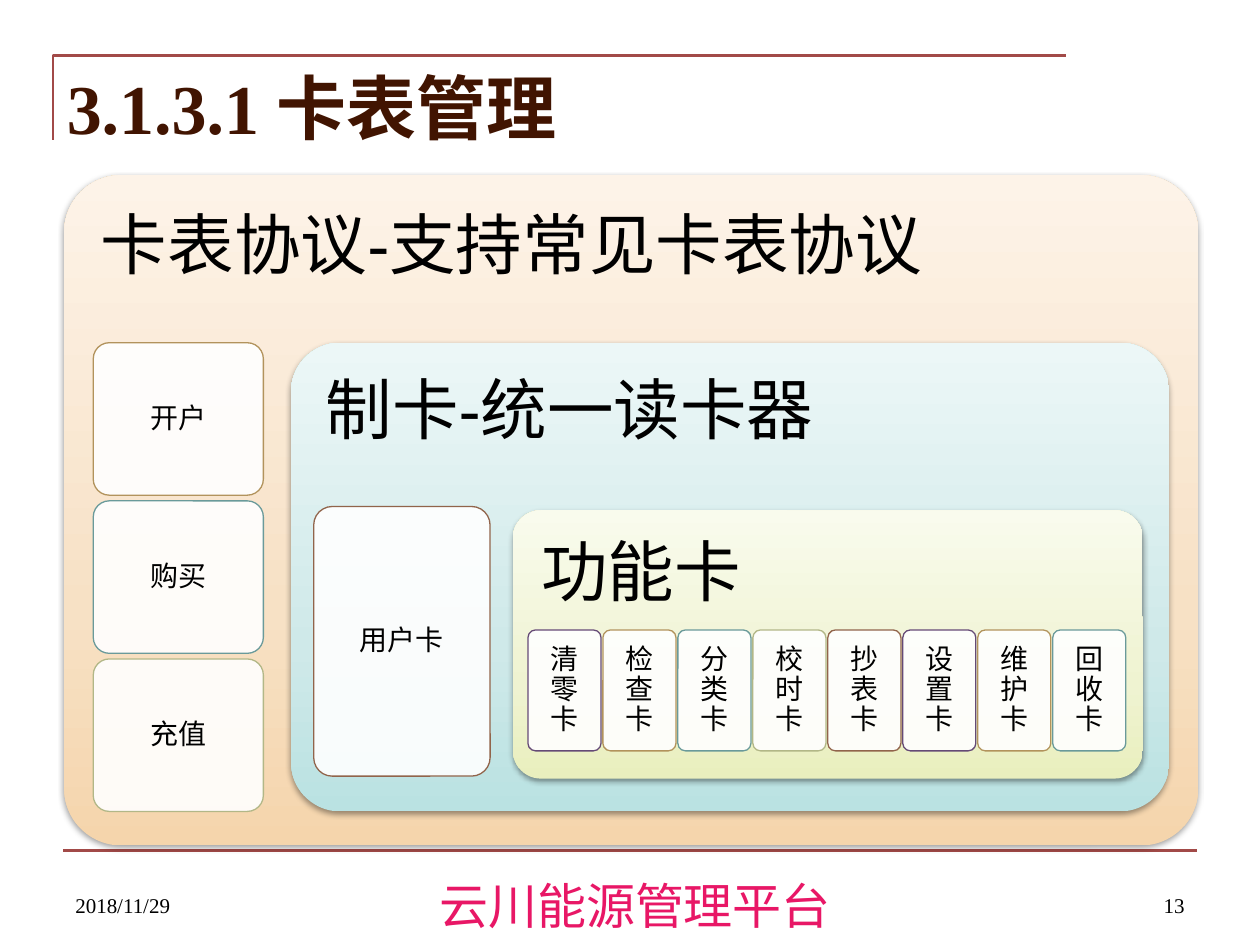
from dataclasses import dataclass
from itertools import cycle

from lxml import etree
from pptx import Presentation
from pptx import util as u
from pptx.dml.color import RGBColor
from pptx.enum import shapes, text
from pptx.oxml.ns import qn

HUES = {
    "rule": "A24A48", "title": "411401", "brand": "E81766",
    "ink": "000000", "paper": "FFFFFF",
    "tan": "B2935C", "teal": "6A9A9A", "olive": "B2B787",
    "brown": "91644B", "plum": "654A76",
}
# Gradient stops run from the bottom edge up
FADES = {
    "sand": ("F5D5AC", "F7E1C5", "FDF3E8"),
    "aqua": ("BAE2E2", "CFE9E9", "ECF7F7"),
    "lime": ("E9EFBE", "EFF3D1", "F9FBED"),
}
STOPS = (0, 35, 100)
CJK = "Noto Sans CJK SC"
SERIF = "Times New Roman"
LEFT, MID, RIGHT = (text.PP_ALIGN.LEFT, text.PP_ALIGN.CENTER,
                    text.PP_ALIGN.RIGHT)
TOP, CORE, BASE = (text.MSO_ANCHOR.TOP, text.MSO_ANCHOR.MIDDLE,
                   text.MSO_ANCHOR.BOTTOM)


@dataclass
class Box:
    """A cell range on a grid of 100 columns by 75 rows."""
    x: float
    y: float
    w: float
    h: float

    def area(self) -> list:
        return [grid(v) for v in (self.x, self.y, self.w, self.h)]


@dataclass
class Panel:
    label: str
    box: Box
    fade: str
    bend: float
    foot: float


@dataclass
class Cards:
    labels: tuple
    first: Box
    dx: float = 0
    dy: float = 0


def grid(n: float) -> int:
    return round(n * unit)


def rgb(name: str) -> RGBColor:
    return RGBColor.from_string(HUES[name])


def put(obj, **form) -> None:
    for key, val in form.items():
        setattr(obj, key, val)


def write(shape, words: str, size: float, face: str = "Arial",
          hue: str = "ink", bold: bool = False, align=LEFT,
          space: float = 1.0, **frame) -> None:
    tf = shape.text_frame
    put(tf, **{"word_wrap": True, **frame})
    para = tf.paragraphs[0]
    put(para, alignment=align, line_spacing=space)
    run = para.add_run()
    run.text = words
    put(run.font, size=u.Pt(size), name=face, bold=bold)
    run.font.color.rgb = rgb(hue)
    east = etree.SubElement(run.font._element, qn("a:ea"))
    east.set("typeface", CJK)


def pad(side: float, foot: float) -> dict:
    sides = ("margin_left", "margin_top", "margin_right")
    return {**dict.fromkeys(sides, u.Inches(side)),
            "margin_bottom": u.Inches(foot)}


def round_box(box: Box, bend: float):
    shape = slide.shapes.add_shape(
        shapes.MSO_SHAPE.ROUNDED_RECTANGLE, *box.area())
    shape.adjustments[0] = bend
    shape.shadow.inherit = False
    return shape


def tint(node, code: str, alpha: int = 100) -> None:
    clr = etree.SubElement(node, qn("a:srgbClr"), val=code)
    if alpha < 100:
        etree.SubElement(clr, qn("a:alpha"), val=str(alpha * 1000))


def draw_panel(panel: Panel) -> None:
    shape = round_box(panel.box, panel.bend)
    shape.line.fill.background()
    shape.fill.gradient()
    props = shape._element.spPr
    fill = props.find(qn("a:gradFill"))
    stops = fill.find(qn("a:gsLst"))
    for old in list(stops):
        stops.remove(old)
    for pos, code in zip(STOPS, FADES[panel.fade]):
        tint(etree.SubElement(stops, qn("a:gs"), pos=str(pos * 1000)), code)
    fill.find(qn("a:lin")).set("ang", str(270 * 60000))
    # Soft shadow below the panel
    cast = etree.SubElement(
        props.find(qn("a:effectLst")), qn("a:outerShdw"),
        blurRad=str(u.Pt(3.1)), dist=str(u.Pt(1.6)),
        dir=str(90 * 60000), rotWithShape="0")
    tint(cast, HUES["ink"], 38)
    write(shape, panel.label, 38, space=0.9, vertical_anchor=TOP,
          **pad(0.16, panel.foot))


def draw_cards(cards: Cards) -> None:
    one = cards.first
    for i, label in enumerate(cards.labels):
        box = Box(one.x + i * cards.dx, one.y + i * cards.dy, one.w, one.h)
        shape = round_box(box, 0.105)
        shape.fill.solid()
        shape.fill.fore_color.rgb = rgb("paper")
        clr = shape._element.spPr.find(qn("a:solidFill"))[0]
        etree.SubElement(clr, qn("a:alpha"), val="90000")
        shape.line.color.rgb = rgb(next(edges))
        shape.line.width = u.Pt(0.75)
        write(shape, label, 16, align=MID, space=0.9, vertical_anchor=CORE,
              **pad(0.07, 0.07))


def draw_rules() -> None:
    # Corner frame of the title
    pen = slide.shapes.build_freeform(grid(4.2), grid(11.1))
    pen.add_line_segments([(grid(4.2), grid(4.4)), (grid(84.6), grid(4.4))],
                          close=False)
    frame = pen.convert_to_shape()
    frame.fill.background()
    frame.shadow.inherit = False
    # Footer rule
    rule = slide.shapes.add_connector(
        shapes.MSO_CONNECTOR.STRAIGHT, grid(5), grid(67.5),
        grid(95), grid(67.5))
    etree.SubElement(rule._element.spPr, qn("a:effectLst"))
    for item in (frame, rule):
        item.line.color.rgb = rgb("rule")
        item.line.width = u.Pt(1.5)


def draw_note(words: str, box: Box, size: float, **form) -> None:
    write(slide.shapes.add_textbox(*box.area()), words, size, **form)


deck = Presentation()
put(deck, slide_width=u.Inches(10), slide_height=u.Inches(7.5))
unit = deck.slide_width / 100
slide = deck.slides.add_slide(deck.slide_layouts[5])
edges = cycle(("tan", "teal", "olive", "brown", "plum"))

# Rules, title and footer
draw_rules()
title = slide.shapes.title
put(title, **dict(zip(("left", "top", "width", "height"),
                      Box(4.3, 4.6, 90.8, 7.7).area())))
write(title, "3.1.3.1 卡表管理", 40, SERIF, "title", True,
      vertical_anchor=CORE, auto_size=text.MSO_AUTO_SIZE.NONE)
draw_note("云川能源管理平台", Box(34.2, 69, 32.4, 3.9), 28, face=CJK,
          hue="brand", align=MID, margin_left=0, margin_right=0)
for words, left, align in (("2018/11/29", 5, LEFT), ("13", 71.7, RIGHT)):
    draw_note(words, Box(left, 68.3, 23.3, 5), 12, face=SERIF, align=align,
              vertical_anchor=BASE)

# Nested panels, each with its cards
PARTS = (
    (Panel("卡表协议-支持常见卡表协议", Box(5.1, 13.9, 90, 53.2),
           "sand", 0.085, 4.13),
     Cards(("开户", "购买", "充值"), Box(7.4, 27.2, 13.5, 12.1), dy=12.55)),
    (Panel("制卡-统一读卡器", Box(23.1, 27.2, 69.7, 37.2),
           "aqua", 0.105, 2.36),
     Cards(("用户卡",), Box(24.9, 40.2, 14, 21.4))),
    (Panel("功能卡", Box(40.7, 40.5, 50, 21.3), "lime", 0.105, 1.2),
     Cards(("清零卡", "检查卡", "分类卡", "校时卡",
            "抄表卡", "设置卡", "维护卡", "回收卡"),
           Box(41.9, 50, 5.8, 9.6), dx=5.95)),
)
for panel, cards in PARTS:
    draw_panel(panel)
    draw_cards(cards)

deck.save("out.pptx")
